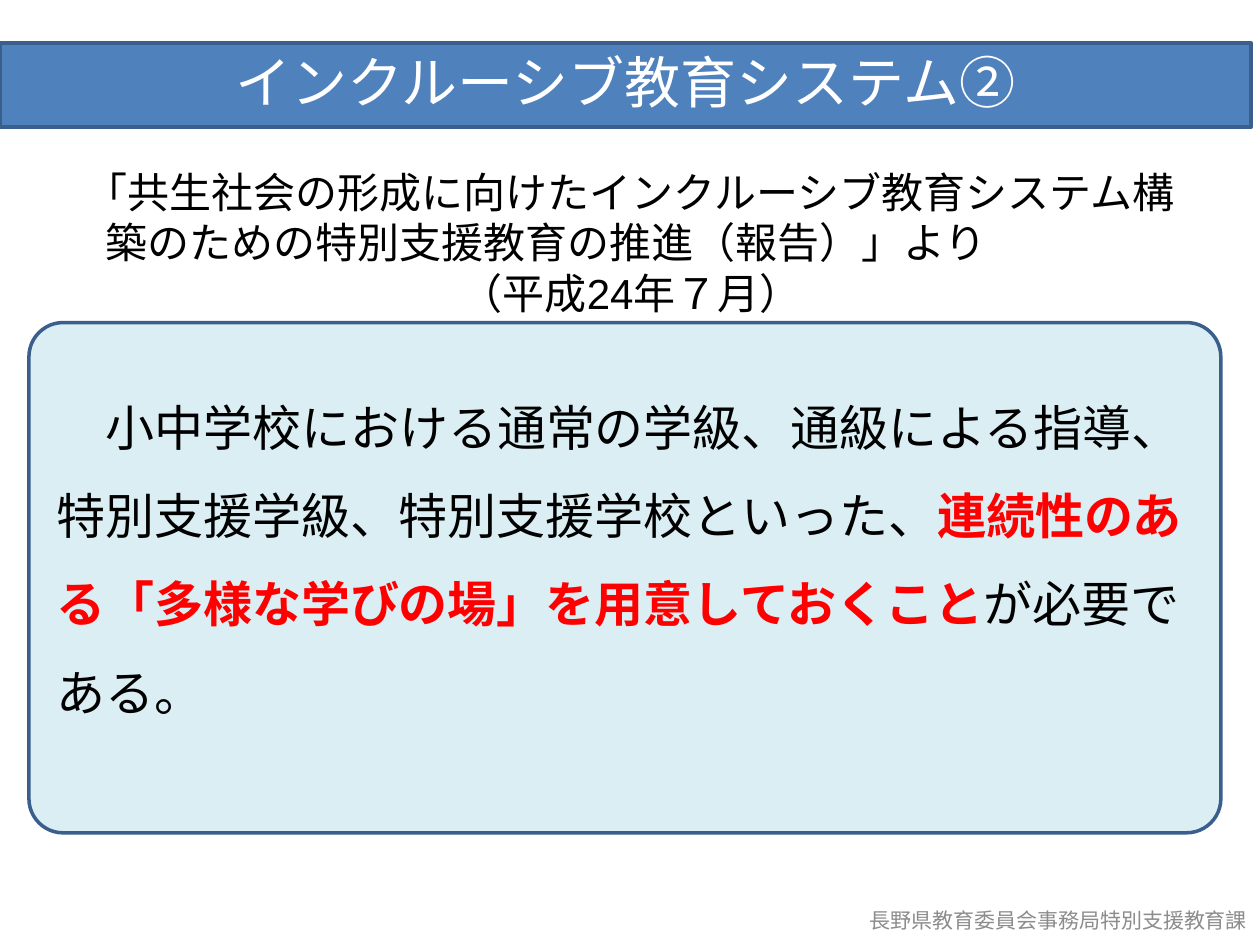
from pptx import Presentation
from pptx.dml.color import RGBColor
from pptx.enum.shapes import MSO_SHAPE as Shape
from pptx.enum.text import MSO_ANCHOR as Anchor, MSO_AUTO_SIZE as AutoSize, PP_ALIGN as Align
from pptx.util import Inches, Pt

COLORS = {"band": "4F81BD", "outline": "3A5F8C", "panel": "DBEEF4", "white": "FFFFFF",
          "text": "000000", "emphasis": "FF0000", "footer": "8C8C8C"}
JAPANESE = "Noto Sans CJK JP"


def color(name):
    return RGBColor.from_string(COLORS[name])


def place(shape, box):
    for name, value in zip(("left", "top", "width", "height"), box):
        setattr(shape, name, Inches(value))


def paint(shape, fill):
    shape.fill.solid()
    shape.fill.fore_color.rgb = color(fill)
    shape.line.color.rgb = color("outline")
    shape.line.width = Pt(2)


def prepare_frame(shape, anchor=Anchor.TOP):
    frame = shape.text_frame
    settings = {"word_wrap": True, "auto_size": AutoSize.NONE, "vertical_anchor": anchor}
    for name, value in settings.items():
        setattr(frame, name, value)
    return frame


def add_run(paragraph, text, size, tint, font=JAPANESE, bold=False):
    run = paragraph.add_run()
    run.text = text
    for name, value in {"size": Pt(size), "name": font, "bold": bold}.items():
        setattr(run.font, name, value)
    run.font.color.rgb = color(tint)


def indent(paragraph, margin, first_line):
    """Set the left margin and the first-line offset, in inches."""
    properties = paragraph._p.get_or_add_pPr()
    properties.set("marL", str(Inches(margin)))
    properties.set("indent", str(Inches(first_line)))


def add_text_box(slide, box, anchor=Anchor.TOP):
    return prepare_frame(slide.shapes.add_textbox(*map(Inches, box)), anchor)


def fill_title_band(slide, box):
    title = slide.shapes.title
    place(title, box)
    paint(title, "band")
    paragraph = prepare_frame(title, Anchor.MIDDLE).paragraphs[0]
    paragraph.alignment = Align.CENTER
    paragraph.line_spacing = 0.9
    add_run(paragraph, "インクルーシブ教育システム②", 32, "white")


def add_citation(slide, box):
    frame = add_text_box(slide, box)
    report = frame.paragraphs[0]
    indent(report, 0.24, -0.16)
    add_run(report, "「共生社会の形成に向けたインクルーシブ教育システム構築のための"
            "特別支援教育の推進（報告）」より", 24, "text", "Arial")
    date = frame.add_paragraph()
    date.alignment = Align.CENTER
    add_run(date, "（平成24年７月）", 24, "text", "Arial")


def add_statement_panel(slide, box):
    left, top, width, height = box
    panel = slide.shapes.add_shape(Shape.ROUNDED_RECTANGLE, *map(Inches, box))
    panel.adjustments[0] = 0.067
    panel.shadow.inherit = False
    paint(panel, "panel")
    frame = add_text_box(slide, (left + 0.12, top + 0.31, width - 0.15, height - 1.94))
    paragraph = frame.paragraphs[0]
    paragraph.line_spacing = 1.5
    indent(paragraph, 0, 0.39)
    for text, tint, bold in (
        ("小中学校における通常の学級、通級による指導、特別支援学級、特別支援学校といった、", "text", False),
        ("連続性のある「多様な学びの場」を用意しておくこと", "emphasis", True),
        ("が必要である。", "text", False),
    ):
        add_run(paragraph, text, 28, tint, bold=bold)


def add_footer(slide, box):
    paragraph = add_text_box(slide, box, Anchor.MIDDLE).paragraphs[0]
    paragraph.alignment = Align.CENTER
    add_run(paragraph, "長野県教育委員会事務局特別支援教育課", 12, "footer", "Calibri")


def main():
    presentation = Presentation()
    presentation.slide_width, presentation.slide_height = Inches(10), Inches(7.5)
    slide = presentation.slides.add_slide(presentation.slide_layouts[5])
    add_citation(slide, (0.5, 1.27, 9.02, 1.25))
    fill_title_band(slide, (0, 0.34, 9.93, 0.67))
    add_statement_panel(slide, (0.23, 2.56, 9.46, 4.05))
    add_footer(slide, (6.53, 7.1, 3.74, 0.4))
    presentation.save("out.pptx")


if __name__ == "__main__":
    main()
